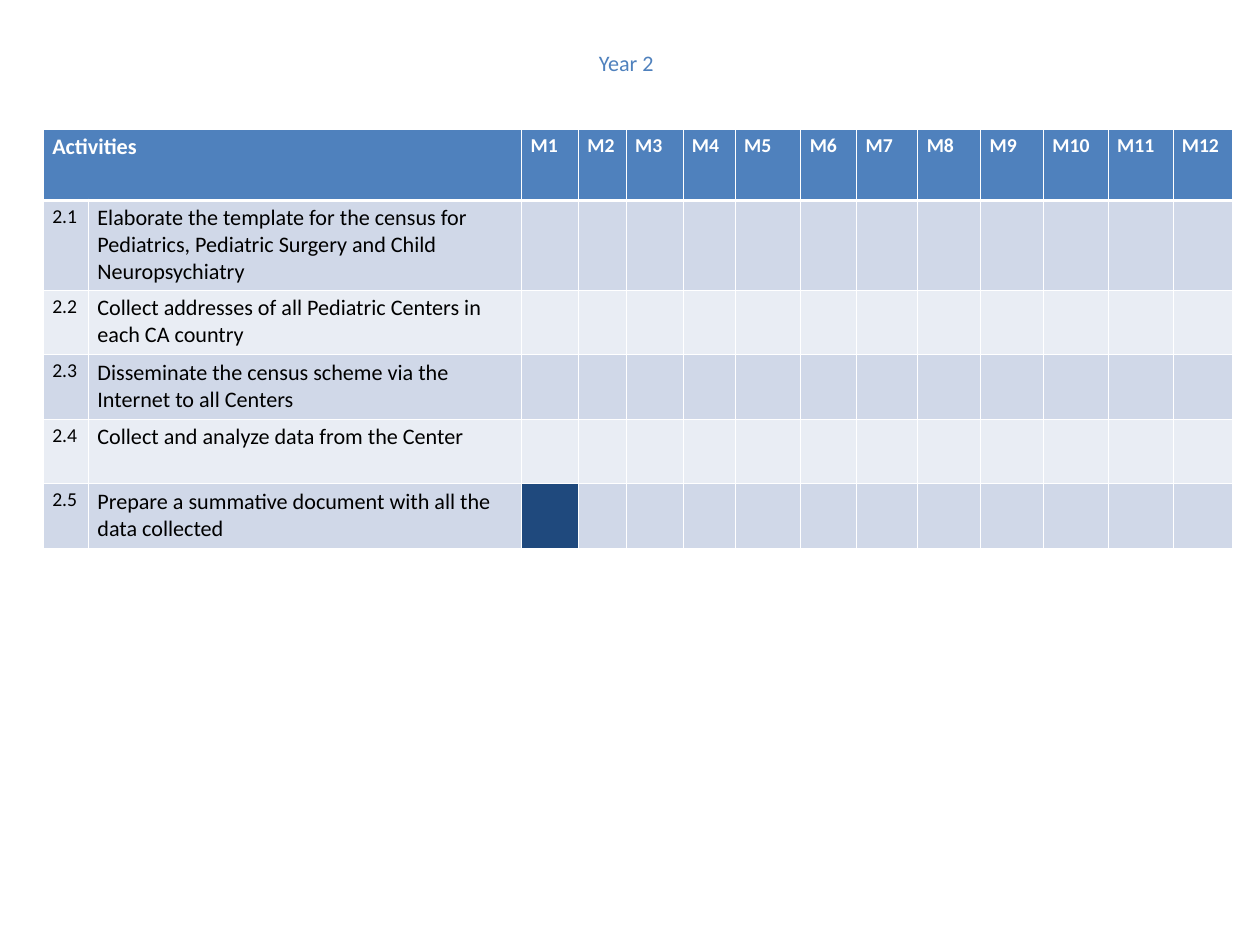
from lxml.etree import SubElement
from pptx import Presentation
from pptx.dml.color import RGBColor
from pptx.enum.text import MSO_ANCHOR, PP_ALIGN
from pptx.oxml.ns import qn
from pptx.util import Pt

# Content
TITLE = "Year 2"
ACTIVITIES = [
    ("2.1", "Elaborate the template for the census for Pediatrics, "
            "Pediatric Surgery and Child Neuropsychiatry"),
    ("2.2", "Collect addresses of all Pediatric Centers in each CA country"),
    ("2.3", "Disseminate the census scheme via the Internet to all Centers"),
    ("2.4", "Collect and analyze data from the Center"),
    ("2.5", "Prepare a summative document with all the data collected"),
]
MONTHS = [f"M{month}" for month in range(1, 13)]
SCHEDULED = {("2.5", "M1")}

# Style, lengths in points
FONT = "Calibri"
BLUE, NAVY, WHITE, BLACK = "4F81BD", "1F497D", "FFFFFF", "000000"
BANDS = ("D0D8E8", "E9EDF4")
COLUMN_WIDTHS = [36.7, 352.1, 46.1, 38.9, 46.1, 42.5, 53.3, 45.4,
                 49.7, 51.1, 51.1, 52.6, 52.6, 48.2]
ROW_HEIGHTS = [57.6, 64.8] + [52.4] * 4
TABLE_LEFT, TABLE_TOP = 35.3, 105.1


def color(value):
    return RGBColor.from_string(value)


def format_text(text_frame, size, text_color, bold=False):
    for paragraph in text_frame.paragraphs:
        paragraph.alignment = PP_ALIGN.LEFT
        for run in paragraph.runs:
            run.font.name = FONT
            run.font.size = Pt(size)
            run.font.bold = bold
            run.font.color.rgb = color(text_color)


def add_borders(cell, top, bottom):
    properties = cell._tc.get_or_add_tcPr()
    for side, width in (("L", 1), ("R", 1), ("T", top), ("B", bottom)):
        line = SubElement(properties, qn(f"a:ln{side}"), w=str(Pt(width)))
        fill = SubElement(line, qn("a:solidFill"))
        SubElement(fill, qn("a:srgbClr"), val=WHITE)


def fill_cell(cell, fill_color):
    cell.fill.solid()
    cell.fill.fore_color.rgb = color(fill_color)


presentation = Presentation()
presentation.slide_width, presentation.slide_height = Pt(1024), Pt(768)
slide = presentation.slides.add_slide(presentation.slide_layouts[5])

# Title
title = slide.shapes.title
title.left, title.top = Pt(479.5), Pt(36.7)
title.width, title.height = Pt(525.6), Pt(29)
title.text_frame.text = TITLE
title.text_frame.vertical_anchor = MSO_ANCHOR.TOP
format_text(title.text_frame, 18, BLUE)

# Table grid
rows = [["Activities", "", *MONTHS]]
rows += [[number, activity] + [""] * len(MONTHS) for number, activity in ACTIVITIES]
table = slide.shapes.add_table(
    len(rows), len(COLUMN_WIDTHS), Pt(TABLE_LEFT), Pt(TABLE_TOP),
    Pt(sum(COLUMN_WIDTHS)), Pt(sum(ROW_HEIGHTS))).table
for column, width in zip(table.columns, COLUMN_WIDTHS):
    column.width = Pt(width)
for row, height in zip(table.rows, ROW_HEIGHTS):
    row.height = Pt(height)
table.cell(0, 0).merge(table.cell(0, 1))

# Cells: header row, then banded activity rows
for row_index, texts in enumerate(rows):
    is_header = row_index == 0
    row_color = BLUE if is_header else BANDS[(row_index - 1) % 2]
    for column_index, text in enumerate(texts):
        cell = table.cell(row_index, column_index)
        cell.text_frame.text = text
        is_activity = column_index == (0 if is_header else 1)
        format_text(cell.text_frame, 18 if is_activity else 16,
                    WHITE if is_header else BLACK, is_header)
        add_borders(cell, 3 if row_index == 1 else 1, 3 if is_header else 1)
        fill_cell(cell, row_color)

# Scheduled months
for row_index, (number, activity) in enumerate(ACTIVITIES, 1):
    for column_index, month in enumerate(MONTHS, 2):
        if (number, month) in SCHEDULED:
            fill_cell(table.cell(row_index, column_index), NAVY)

presentation.save("out.pptx")
